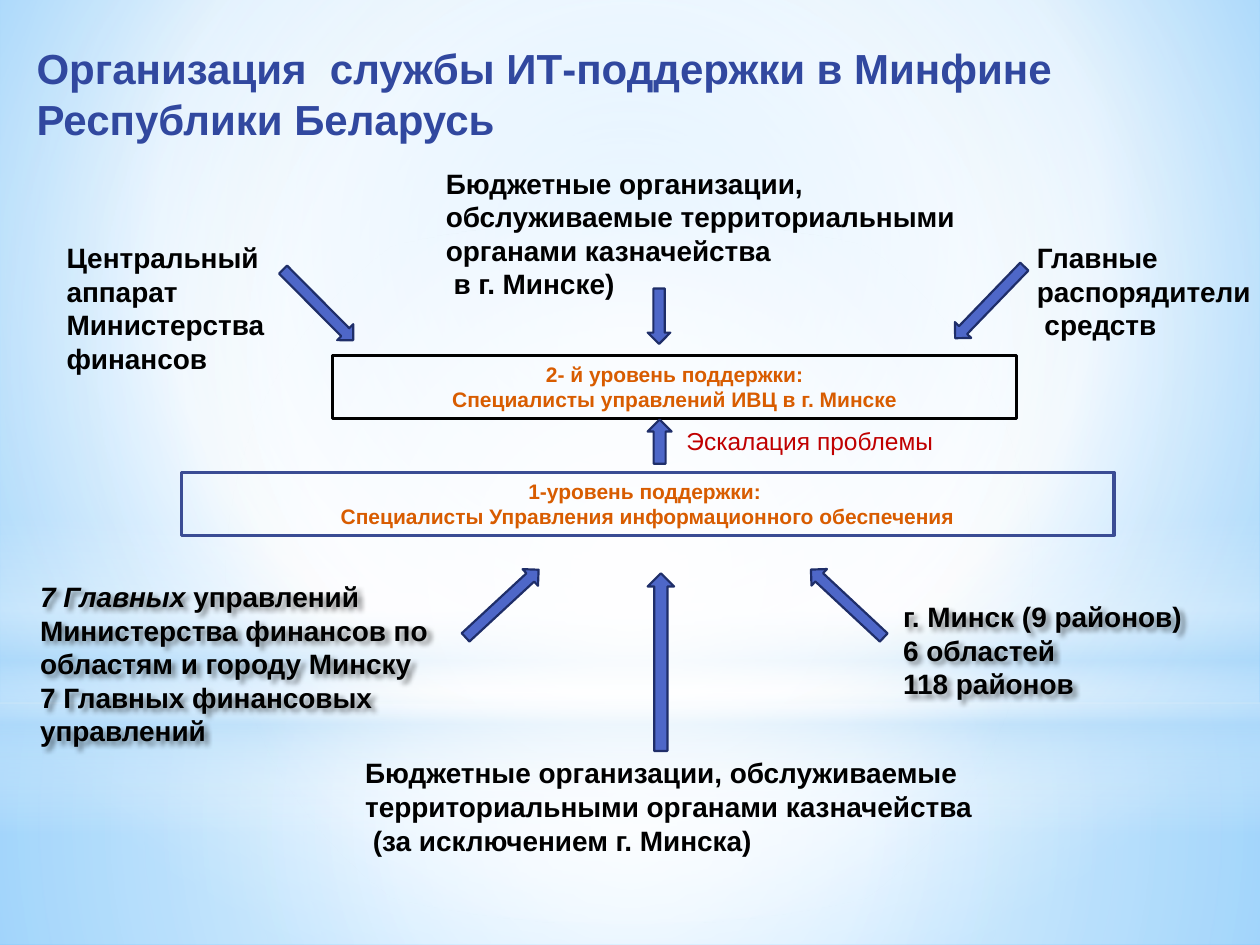
from lxml import etree
from pptx import Presentation
from pptx.dml.color import RGBColor
from pptx.enum.shapes import MSO_SHAPE
from pptx.enum.text import MSO_ANCHOR, MSO_AUTO_SIZE, PP_ALIGN
from pptx.oxml.ns import qn
from pptx.util import Inches, Pt

RECTANGLE, ELLIPSE = MSO_SHAPE.RECTANGLE, MSO_SHAPE.OVAL
RIGHT_ARROW, UP_ARROW = MSO_SHAPE.RIGHT_ARROW, MSO_SHAPE.UP_ARROW
TOP, FIT_SHAPE = MSO_ANCHOR.TOP, MSO_AUTO_SIZE.SHAPE_TO_FIT_TEXT
LEFT, CENTER = PP_ALIGN.LEFT, PP_ALIGN.CENTER

BLACK = RGBColor(0x00, 0x00, 0x00)
WHITE = RGBColor(0xFF, 0xFF, 0xFF)
PALE_BLUE = RGBColor(0xB4, 0xDC, 0xFA)
SKY = RGBColor(0x9E, 0xD5, 0xFF)
DEEP_SKY = RGBColor(0x5B, 0xB9, 0xFF)
TITLE_BLUE = RGBColor(0x31, 0x48, 0x9F)
FRAME_BLUE = RGBColor(0x3A, 0x4C, 0x94)
ARROW_BLUE = RGBColor(0x4E, 0x67, 0xC8)
ARROW_EDGE = RGBColor(0x1F, 0x2E, 0x69)
ORANGE = RGBColor(0xD8, 0x5C, 0x00)
RED = RGBColor(0xC0, 0x00, 0x00)

FONT = "Arial"
COLUMNS, ROWS = 100, 75
CELL = Inches(0.1)
CENTRE = (50, 50, 50, 50)
CLIENTS = "Бюджетные организации, обслуживаемые территориальными органами казначейства"


def cells(box, origin=(0, 0)):
    """Turn a box in grid cells, relative to an origin, into slide lengths."""
    left, top, width, height = box
    grid_box = (origin[0] + left, origin[1] + top, width, height)
    return [round(value * CELL) for value in grid_box]


def set_gradient(element, stops, focus=None):
    """Replace the solid fill by a gradient: circular around focus, else vertical."""
    gradient = etree.Element(qn("a:gradFill"), rotWithShape="1")
    stop_list = etree.SubElement(gradient, qn("a:gsLst"))
    for position, color, opacity in stops:
        stop = etree.SubElement(stop_list, qn("a:gs"), pos=str(position * 1000))
        value = etree.SubElement(stop, qn("a:srgbClr"), val=str(color))
        if opacity < 100:
            etree.SubElement(value, qn("a:alpha"), val=str(opacity * 1000))
    if focus:
        circle = etree.SubElement(gradient, qn("a:path"), path="circle")
        sides = {side: str(share * 1000) for side, share in zip("ltrb", focus)}
        etree.SubElement(circle, qn("a:fillToRect"), sides)
    else:
        etree.SubElement(gradient, qn("a:lin"), ang="5400000", scaled="0")
    solid = next(element.iter(qn("a:solidFill")))
    solid.getparent().replace(solid, gradient)


def add_text_shadow(shape):
    effects = etree.SubElement(shape._element.spPr, qn("a:effectLst"))
    shadow = etree.SubElement(effects, qn("a:outerShdw"), blurRad="38100",
                              dist="38100", dir="2700000", algn="tl")
    color = etree.SubElement(shadow, qn("a:srgbClr"), val=str(BLACK))
    etree.SubElement(color, qn("a:alpha"), val="43000")


def write(shape, text, size=16, color=BLACK, bold=True, align=LEFT, wrap=True):
    frame = shape.text_frame
    frame.text = text
    frame.word_wrap = wrap
    frame.auto_size = FIT_SHAPE
    frame.vertical_anchor = TOP
    for paragraph in frame.paragraphs:
        paragraph.alignment = align
        for run in paragraph.runs:
            font = run.font
            font.name, font.size, font.bold = FONT, Pt(size), bold
            font.color.rgb = color


def add_label(slide, origin, box, text, **style):
    label = slide.shapes.add_textbox(*cells(box, origin))
    write(label, text, **style)
    return label


def add_level(slide, origin, box, text, color, width):
    level = slide.shapes.add_shape(RECTANGLE, *cells(box, origin))
    level.shadow.inherit = False
    level.fill.background()
    level.line.color.rgb = color
    level.line.width = Pt(width)
    write(level, text, size=12, color=ORANGE, align=CENTER)


def add_arrow(slide, origin, box, rotation=0, kind=RIGHT_ARROW):
    arrow = slide.shapes.add_shape(kind, *cells(box, origin))
    arrow.shadow.inherit = False
    arrow.rotation = rotation
    arrow.fill.solid()
    arrow.fill.fore_color.rgb = ARROW_BLUE
    arrow.line.color.rgb = ARROW_EDGE
    arrow.line.width = Pt(1.25)


def draw_backdrop(slide):
    slide.background.fill.solid()
    set_gradient(slide.element, [(0, SKY, 100), (60, WHITE, 100), (100, DEEP_SKY, 100)],
                 (20, 10, 20, 60))
    layers = [
        (RECTANGLE, 55.8, 19.2, CENTRE,
         [(0, WHITE, 91), (37, WHITE, 76), (100, PALE_BLUE, 79)]),
        (RECTANGLE, 0, 55.8, CENTRE,
         [(0, WHITE, 89), (48, WHITE, 62), (100, PALE_BLUE, 79)]),
        (RECTANGLE, 41.2, 25, None,
         [(0, WHITE, 0), (29, WHITE, 30), (45, PALE_BLUE, 40),
          (55, WHITE, 26), (65, PALE_BLUE, 60), (100, WHITE, 0)]),
        (ELLIPSE, 17.5, 55.8, CENTRE, [(0, WHITE, 100), (56, WHITE, 0)]),
    ]
    for kind, top, height, focus, stops in layers:
        layer = slide.shapes.add_shape(kind, *cells((0, top, COLUMNS, height)))
        layer.shadow.inherit = False
        layer.line.fill.background()
        layer.fill.solid()
        set_gradient(layer._element, stops, focus)


def place_title(slide, box):
    title = slide.shapes.title
    title.left, title.top, title.width, title.height = cells(box)
    write(title, "Организация  службы ИТ-поддержки в Минфине Республики Беларусь",
          size=24, color=TITLE_BLUE)
    slide.shapes._spTree.append(title._element)  # in front of the backdrop


def draw_second_level(slide, origin):
    """Second support level with the three groups that turn to it."""
    add_level(slide, origin, (26.4, 15.5, 54.3, 5),
              "2- й уровень поддержки:\nСпециалисты управлений ИВЦ в г. Минске", BLACK, 1.5)
    add_label(slide, origin, (4.3, 5.9, 26, 11.8),
              "Центральный аппарат Министерства финансов")
    add_label(slide, origin, (34.4, 0, 43.3, 11.8), CLIENTS + "\n в г. Минске)")
    add_label(slide, origin, (81.3, 5.9, 19.2, 9.1),
              "Главные\nраспорядители\n средств", wrap=False)
    add_arrow(slide, origin, (21.3, 10.6, 7.9, 1.8), 45.2)
    add_arrow(slide, origin, (50.1, 11.5, 4.4, 1.8), 90)
    add_arrow(slide, origin, (74.6, 10.4, 7.9, 1.8), 134)


def draw_escalation(slide, origin):
    add_arrow(slide, origin, (0, 0, 1.9, 3.5), kind=UP_ARROW)
    add_label(slide, origin, (2.1, 0, 32.7, 3.4), "Эскалация проблемы",
              size=14, color=RED, bold=False)


def draw_first_level(slide, origin):
    """First support level with the three groups that turn to it."""
    add_level(slide, origin, (14.4, 0, 74, 5),
              "1-уровень поддержки: \nСпециалисты Управления информационного обеспечения",
              FRAME_BLUE, 2)
    offices = add_label(slide, origin, (2.2, 8, 39.4, 14.5),
                        "7 Главных \n7 Главных финансовых управлений")
    first_paragraph = offices.text_frame.paragraphs[0]
    rest = first_paragraph.add_run()
    rest.text = "управлений Министерства финансов по областям и городу Минску"
    rest.font.name, rest.font.size, rest.font.bold = FONT, Pt(16), True
    rest.font.color.rgb = BLACK
    first_paragraph.runs[0].font.italic = True
    regions = add_label(slide, origin, (70.7, 9.6, 25.7, 12.5),
                        "г. Минск (9 районов)\n6 областей\n118 районов")
    for label in (offices, regions):
        add_text_shadow(label)
    add_label(slide, origin, (28, 22, 51.2, 9.1), CLIENTS + "\n (за исключением г. Минска)")
    add_arrow(slide, origin, (35.9, 9.5, 7.9, 1.8), 317.2)
    add_arrow(slide, origin, (51.4, 8, 2.1, 14.1), kind=UP_ARROW)
    add_arrow(slide, origin, (63.3, 9.5, 7.9, 1.8), 223)


def main():
    presentation = Presentation()
    presentation.slide_width = COLUMNS * CELL
    presentation.slide_height = ROWS * CELL
    slide = presentation.slides.add_slide(presentation.slide_layouts[5])
    draw_backdrop(slide)
    place_title(slide, (1.9, 2.9, 94.5, 9.1))
    draw_second_level(slide, (0, 12.7))
    draw_escalation(slide, (51.4, 33.3))
    draw_first_level(slide, (0, 37.5))
    presentation.save("out.pptx")


if __name__ == "__main__":
    main()
